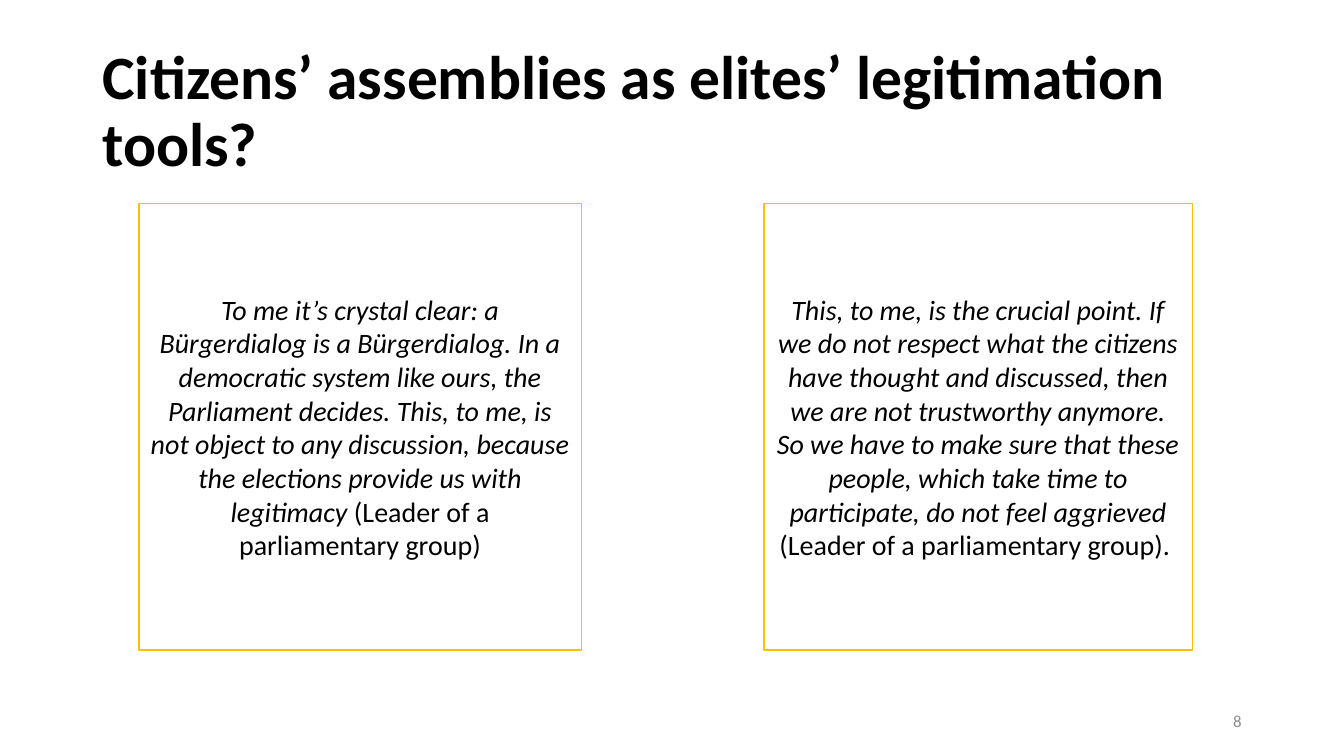
from pptx import Presentation
from pptx.dml.color import RGBColor
from pptx.enum.shapes import MSO_SHAPE
from pptx.enum.text import MSO_ANCHOR, PP_ALIGN
from pptx.util import Cm, Pt

TITLE = "Citizens’ assemblies as elites’ legitimation tools?"
PAGE_NUMBER = "8"
# Each quote: left and width in cm, words, speaker
QUOTES = [
    (3.5, 11.15,
     "To me it’s crystal clear: a Bürgerdialog is a Bürgerdialog. In a democratic "
     "system like ours, the Parliament decides. This, to me, is not object to any "
     "discussion, because the elections provide us with legitimacy ",
     "(Leader of a parliamentary group)"),
    (19.25, 10.8,
     "This, to me, is the crucial point. If we do not respect what the citizens have "
     "thought and discussed, then we are not trustworthy anymore. So we have to make "
     "sure that these people, which take time to participate, do not feel aggrieved ",
     "(Leader of a parliamentary group). "),
]
QUOTE_TOP, QUOTE_HEIGHT = 5.13, 11.25
COLORS = {"text": "000000", "box": "FFFFFF", "border": "FFC000", "number": "8C8C8C"}
FONT = "Calibri"


def color(name):
    return RGBColor.from_string(COLORS[name])


def add_run(paragraph, text, size, color_name="text", bold=False, italic=False):
    run = paragraph.add_run()
    run.text = text
    run.font.name = FONT
    run.font.size = Pt(size)
    run.font.bold = bold
    run.font.italic = italic
    run.font.color.rgb = color(color_name)


def prepare_text(shape, alignment):
    text_frame = shape.text_frame
    text_frame.word_wrap = True
    text_frame.vertical_anchor = MSO_ANCHOR.MIDDLE
    paragraph = text_frame.paragraphs[0]
    paragraph.alignment = alignment
    return paragraph


presentation = Presentation()
presentation.slide_width, presentation.slide_height = Cm(33.87), Cm(19.05)
slide = presentation.slides.add_slide(presentation.slide_layouts[6])

# Title
title = slide.shapes.add_textbox(Cm(2.33), Cm(1.01), Cm(29.21), Cm(3.68))
paragraph = prepare_text(title, PP_ALIGN.LEFT)
paragraph.line_spacing = 0.9
add_run(paragraph, TITLE, 44, bold=True)

# Quote boxes
for left, width, words, speaker in QUOTES:
    box = slide.shapes.add_shape(
        MSO_SHAPE.RECTANGLE, Cm(left), Cm(QUOTE_TOP), Cm(width), Cm(QUOTE_HEIGHT))
    box.shadow.inherit = False
    box.fill.solid()
    box.fill.fore_color.rgb = color("box")
    box.line.color.rgb = color("border")
    box.line.width = Pt(1)
    paragraph = prepare_text(box, PP_ALIGN.CENTER)
    add_run(paragraph, words, 20, italic=True)
    add_run(paragraph, speaker, 20)

# Page number
number = slide.shapes.add_textbox(Cm(23.92), Cm(17.66), Cm(7.62), Cm(1.01))
add_run(prepare_text(number, PP_ALIGN.RIGHT), PAGE_NUMBER, 12, "number")

presentation.save("out.pptx")
